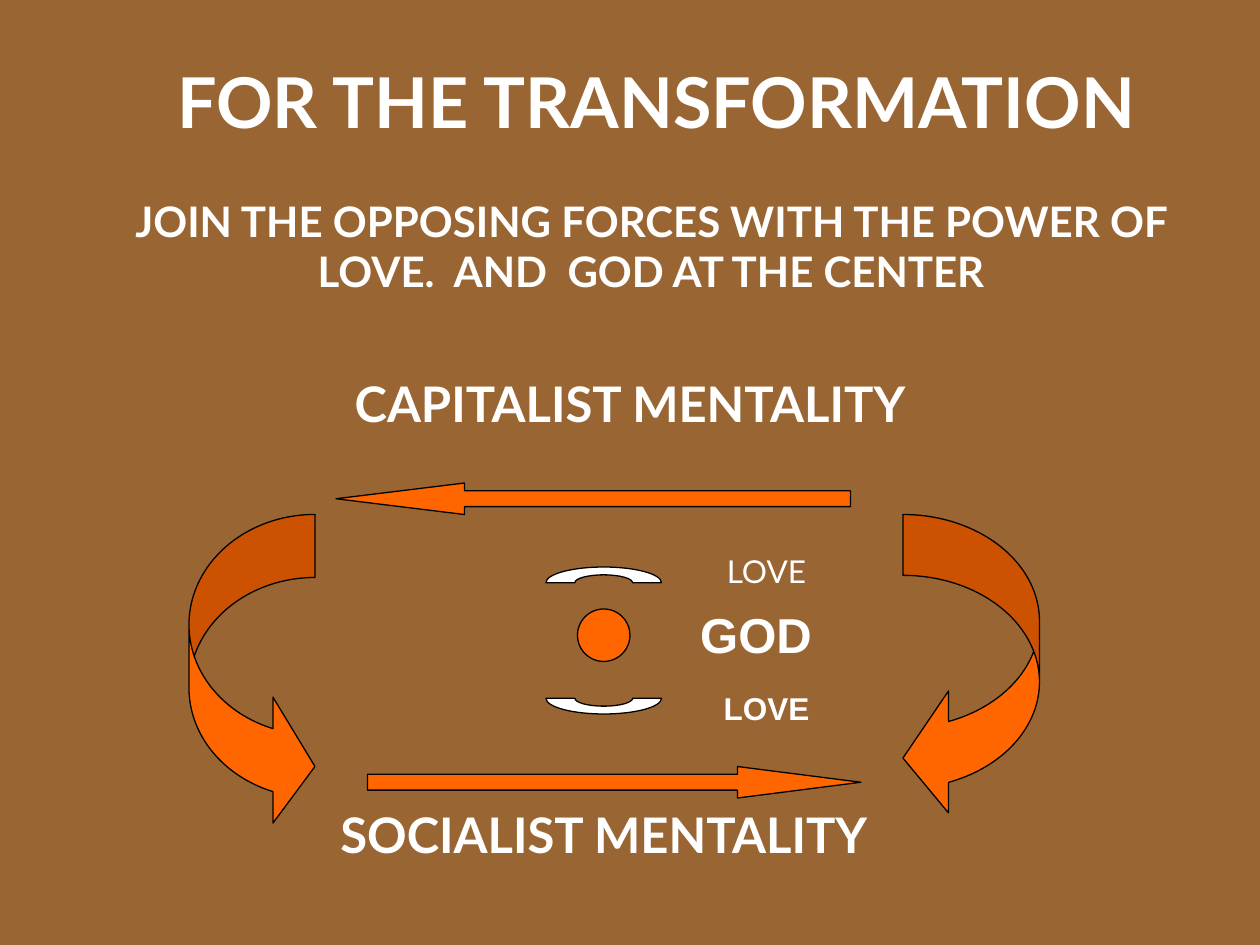
from lxml.etree import SubElement
from pptx import Presentation
from pptx.dml.color import RGBColor
from pptx.enum.shapes import MSO_SHAPE
from pptx.enum.text import MSO_AUTO_SIZE, PP_ALIGN
from pptx.oxml.ns import qn
from pptx.util import Pt

BROWN = RGBColor(0x99, 0x66, 0x33)
ORANGE = RGBColor(0xFF, 0x66, 0x00)
WHITE = RGBColor(0xFF, 0xFF, 0xFF)
BLACK = RGBColor(0, 0, 0)

TEXTS = [
    ("FOR THE TRANSFORMATION", (30, 30, 690, 55.5), 40, "Lato", True),
    ("JOIN THE OPPOSING FORCES WITH THE POWER OF LOVE.  AND  GOD AT THE CENTER",
     (42, 108, 660, 65), 24, "Lato", True),
    ("CAPITALIST MENTALITY", (144, 210, 432, 41), 28, "Lato", True),
    ("SOCIALIST MENTALITY", (126, 456, 438, 41), 28, "Lato", True),
    ("LOVE", (390, 312, 96, 29), 18, "Lato", False),
    ("GOD", (390, 342, 84, 41), 28, "Arial", True),
    ("LOVE", (390, 390, 96, 29), 18, "Arial", True),
]
SHAPES = [
    (MSO_SHAPE.OVAL, (330, 348, 30, 30), ()),
    (MSO_SHAPE.LEFT_ARROW, (192, 276, 294, 18), (0.5, 4.08)),
    (MSO_SHAPE.RIGHT_ARROW, (210, 438, 282, 18), (0.5, 3.92)),
    (MSO_SHAPE.CURVED_RIGHT_ARROW, (108, 294, 72, 180), (0.5, 1, 1 / 3)),
    (MSO_SHAPE.CURVED_LEFT_ARROW, (516, 294, 78, 174), (0.446, 0.892, 1 / 3)),
]
ARCS = [(312, 324, 0), (312, 390, 180)]
WIDE, HIGH = 66, 18
OUTLINE = [
    ("moveTo", [(16.5, 9)]),
    ("cubicBezTo", [(16.5, 6.5), (24, 4.5), (33, 4.5)]),
    ("cubicBezTo", [(42, 4.5), (49.5, 6.5), (49.5, 9)]),
    ("lnTo", [(66, 9)]),
    ("cubicBezTo", [(66, 4), (51, 0), (33, 0)]),
    ("cubicBezTo", [(15, 0), (0, 4), (0, 9)]),
    ("close", []),
]


def paint(shape, color):
    shape.shadow.inherit = False
    shape.fill.solid()
    shape.fill.fore_color.rgb = color
    shape.line.color.rgb = BLACK
    shape.line.width = Pt(0.75)


def add_text(slide, text, box, size, face, bold):
    label = slide.shapes.add_textbox(*map(Pt, box))
    frame = label.text_frame
    frame.word_wrap = True
    frame.auto_size = MSO_AUTO_SIZE.SHAPE_TO_FIT_TEXT
    frame.text = text
    line = frame.paragraphs[0]
    line.alignment = PP_ALIGN.CENTER
    font = line.runs[0].font
    font.size, font.name, font.bold = Pt(size), face, bold
    font.color.rgb = WHITE


def add_arc(slide, left, top, turn):
    draft = slide.shapes.build_freeform(Pt(left), Pt(top))
    draft.add_line_segments([(Pt(left + WIDE), Pt(top + HIGH))])
    arc = draft.convert_to_shape()
    route = next(arc.element.iter(qn("a:path")))
    for step in list(route):
        route.remove(step)
    for name, points in OUTLINE:
        step = SubElement(route, qn("a:" + name))
        for x, y in points:
            SubElement(step, qn("a:pt"), x=str(Pt(x)), y=str(Pt(y)))
    arc.rotation = turn
    paint(arc, WHITE)


def main():
    deck = Presentation()
    deck.slide_width, deck.slide_height = Pt(720), Pt(540)
    slide = deck.slides.add_slide(deck.slide_layouts[6])
    slide.background.fill.solid()
    slide.background.fill.fore_color.rgb = BROWN
    for kind, box, values in SHAPES:
        shape = slide.shapes.add_shape(kind, *map(Pt, box))
        for index, value in enumerate(values):
            shape.adjustments[index] = value
        paint(shape, ORANGE)
    for arc in ARCS:
        add_arc(slide, *arc)
    for item in TEXTS:
        add_text(slide, *item)
    deck.save("out.pptx")


if __name__ == "__main__":
    main()
